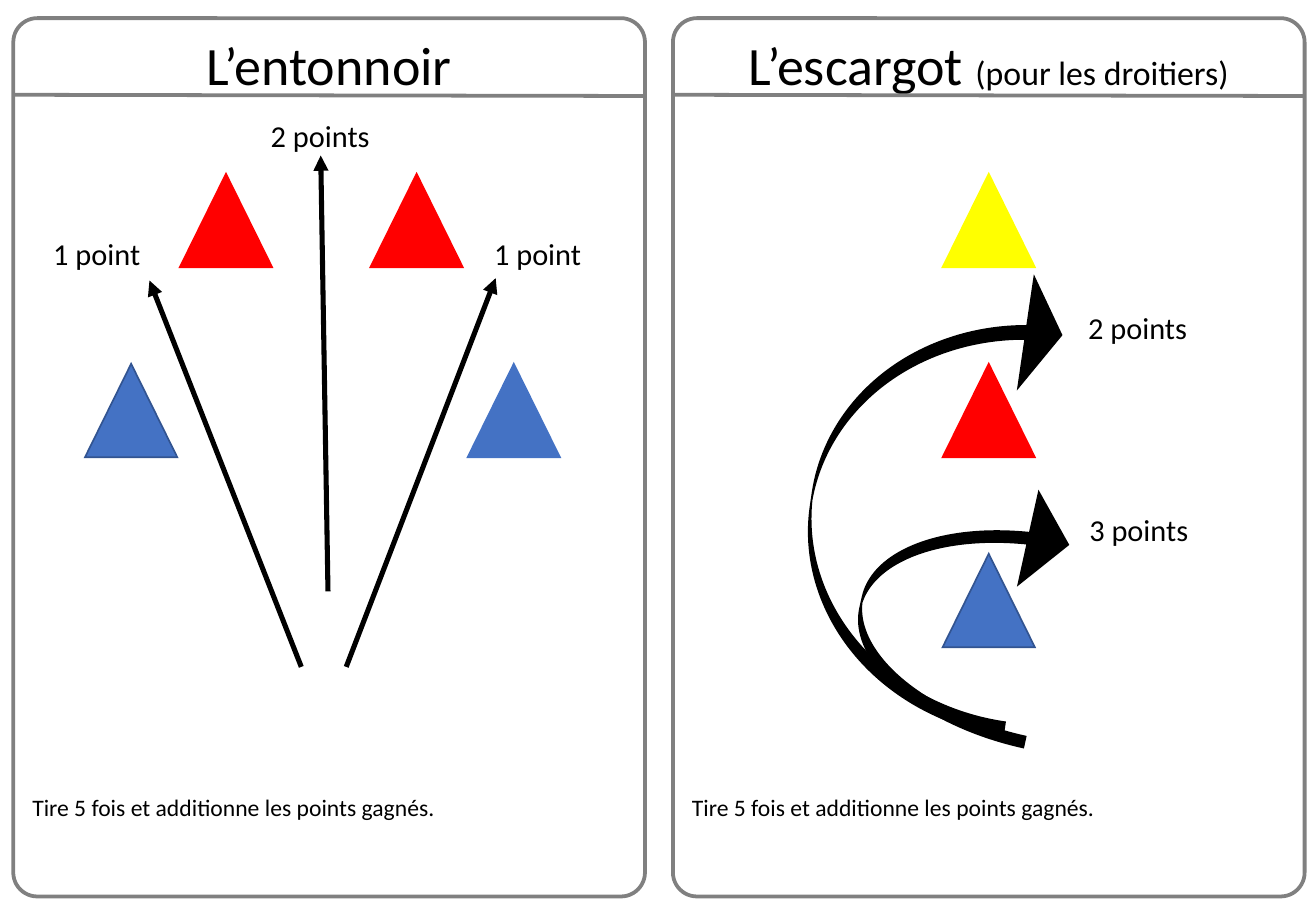
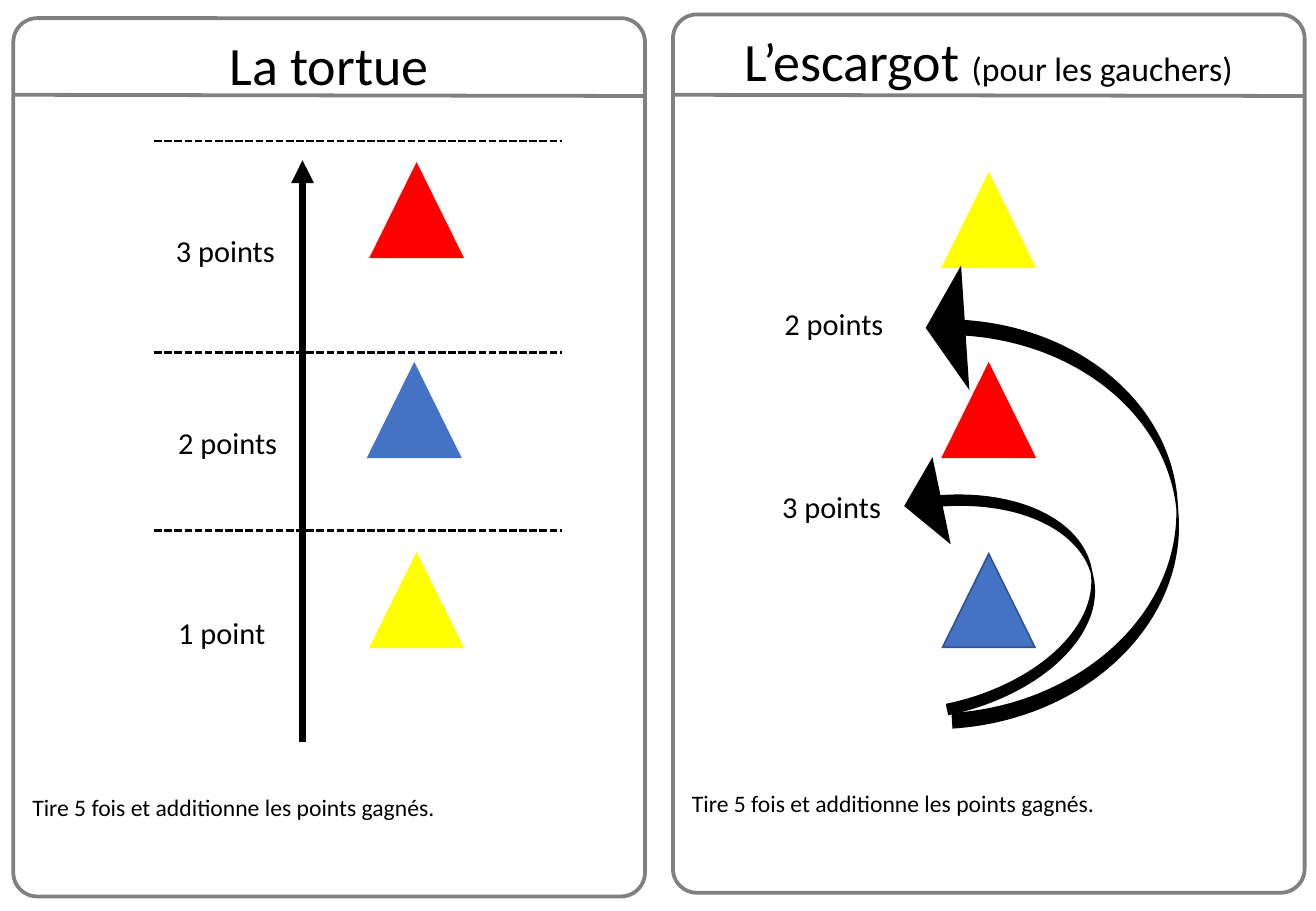
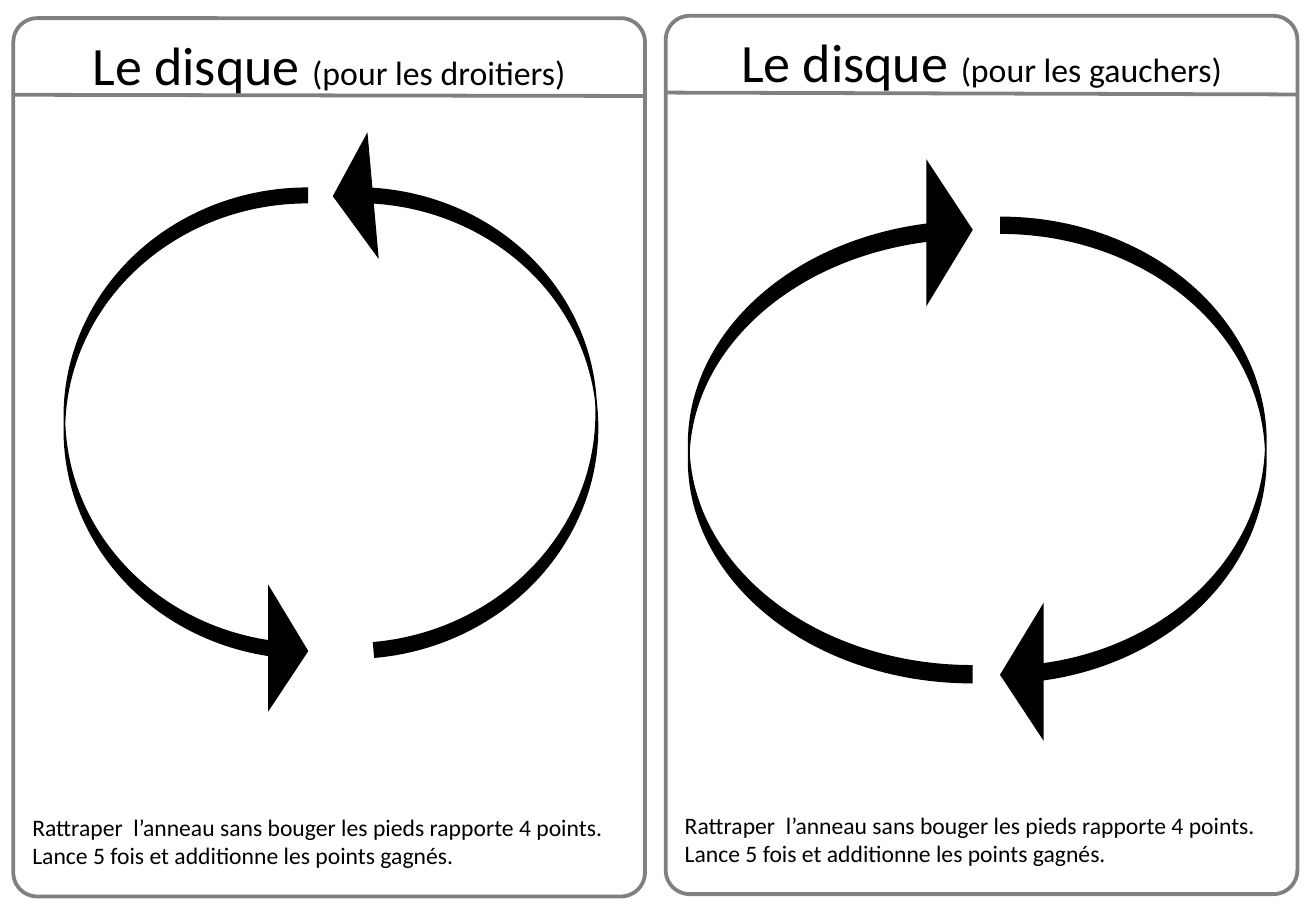
import pptx
import pptx.util
import pptx.dml.color
import pptx.enum.dml
import pptx.enum.shapes
import pptx.enum.text
import pptx.oxml.ns
import lxml.etree

Pt = pptx.util.Pt
RGBColor = pptx.dml.color.RGBColor
MSO_SHAPE = pptx.enum.shapes.MSO_SHAPE
PP_ALIGN = pptx.enum.text.PP_ALIGN
qn = pptx.oxml.ns.qn

# Shared style
BLACK = RGBColor(0x00, 0x00, 0x00)
WHITE = RGBColor(0xFF, 0xFF, 0xFF)
GRAY = RGBColor(0x80, 0x80, 0x80)
RED = RGBColor(0xFF, 0x00, 0x00)
YELLOW = RGBColor(0xFF, 0xFF, 0x00)
BLUE = RGBColor(0x44, 0x72, 0xC4)
DARK_BLUE = RGBColor(0x32, 0x54, 0x91)
FONT = "Calibri"

# Shared layout, in points
CARD_WIDTH, CARD_HEIGHT = 374.4, 520.6
LEFT_CARD, RIGHT_CARD, CARD_TOP = 7.9, 398.9, 10.8
CONE_WIDTH, CONE_HEIGHT = 54.7, 55.4
FAR, MIDDLE, NEAR = [103 + 112.65 * row for row in range(3)]
SNAIL_X = 558.7
LABEL_HEIGHT = 28.8
LABEL_WIDTHS = {"1 point": 67, "2 points": 74.2, "3 points": 74.2}

# Shared wording, with the gap between title and rule
SHOOT = (413, ["Tire 5 fois et additionne les points gagnés."])
CATCH = (425, ["Rattraper  l’anneau sans bouger les pieds rapporte 4 points.",
               "Lance 5 fois et additionne les points gagnés."])
RIGHT_HANDED, LEFT_HANDED = "(pour les droitiers)", "(pour les gauchers)"

SNAIL_CONES = [(SNAIL_X, NEAR, BLUE, DARK_BLUE),
               (SNAIL_X, FAR, YELLOW, YELLOW),
               (SNAIL_X, MIDDLE, RED, RED)]

# cards: left, top, rule start y, rule end y, title, hand, rule text
# cones: left, top, fill, outline
# lines: x1, y1, x2, y2, width, kind
# loops: left, top, width, height, rotation, flipped, head length
# labels: left, top, text
SLIDES = [
    {
        "cards": [
            (LEFT_CARD, CARD_TOP, 56.2, 56.9, "L’entonnoir", "", SHOOT),
            (RIGHT_CARD, CARD_TOP, 56.2, 56.9, "L’escargot ", RIGHT_HANDED, SHOOT),
        ],
        "cones": [
            (50.4, MIDDLE, BLUE, DARK_BLUE),
            (219.6, FAR, RED, RED),
            (277.2, MIDDLE, BLUE, BLUE),
            (106.6, FAR, RED, RED),
        ] + SNAIL_CONES,
        "lines": [
            (194.4, 350.6, 190.1, 92.2, 3, "arrow"),
            (178.6, 395.3, 88.6, 166.3, 3, "arrow"),
            (205.2, 395.3, 293.8, 164.9, 3, "arrow"),
        ],
        "loops": [
            (511.9, 281.5, 112.3, 151.2, 192.5, False, 0.212),
            (482.4, 154.8, 132.5, 272.9, 188.3, False, 0.158),
        ],
        "labels": [
            (285.8, 136.1, "1 point"),
            (24.5, 136.1, "1 point"),
            (153.4, 66.2, "2 points"),
            (638.6, 299.5, "3 points"),
            (637.9, 180, "2 points"),
        ],
    },
    {
        "cards": [
            (LEFT_CARD, CARD_TOP, 56.2, 56.9, "La tortue", "", SHOOT),
            (RIGHT_CARD, 8.6, 56.2, 56.9, "L’escargot ", LEFT_HANDED, SHOOT),
        ],
        "cones": [
            (219.6, 97.2, RED, RED),
            (218.2, MIDDLE, BLUE, BLUE),
            (219.6, NEAR, YELLOW, YELLOW),
        ] + SNAIL_CONES,
        "lines": [(179.3, 439.9, 179.3, 95, 4.5, "arrow")]
        + [(91.4, y, 333.4, y, 1.5, "dash") for y in (83.5, 208.8, 314.6)],
        "loops": [
            (545.8, 263.5, 100.1, 151.2, 168.2, True, 0.212),
            (555.8, 154.1, 141.1, 272.9, 176.2, True, 0.158),
        ],
        "labels": [
            (98.6, 360.7, "1 point"),
            (98.6, 247.7, "2 points"),
            (97.2, 133.9, "3 points"),
            (456.5, 285.8, "3 points"),
            (457.9, 177.1, "2 points"),
        ],
    },
    {
        "cards": [
            (394.6, 9.4, 54.9, 56, "Le disque ", LEFT_HANDED, CATCH),
            (LEFT_CARD, CARD_TOP, 56.2, 56.9, "Le disque ", RIGHT_HANDED, CATCH),
        ],
        "cones": [],
        "lines": [],
        "loops": [
            (208.1, 73.4, 144, 310.3, 174.9, True, 0.158),
            (38.2, 111.6, 144, 310.3, 0, True, 0.158),
            (408.2, 94.3, 167.8, 310.3, 180, False, 0.158),
            (593.3, 128.9, 157, 310.3, 0, False, 0.158),
        ],
        "labels": [],
    },
]


def add_shape(slide, kind, box, fill, outline, width=1):
    shape = slide.shapes.add_shape(kind, *[Pt(length) for length in box])
    shape.shadow.inherit = False
    shape.fill.solid()
    shape.fill.fore_color.rgb = fill
    shape.line.color.rgb = outline
    shape.line.width = Pt(width)
    # Sharp corners
    border = shape.element.spPr.find(qn("a:ln"))
    lxml.etree.SubElement(border, qn("a:miter")).set("lim", "800000")
    return shape


def add_line(slide, ends, color, width, kind="plain"):
    connector = slide.shapes.add_connector(
        pptx.enum.shapes.MSO_CONNECTOR.STRAIGHT, *[Pt(length) for length in ends])
    connector.line.color.rgb = color
    connector.line.width = Pt(width)
    properties = connector.element.spPr
    if kind == "dash":
        connector.line.dash_style = pptx.enum.dml.MSO_LINE.SQUARE_DOT
    if kind == "arrow":
        outline = properties.find(qn("a:ln"))
        lxml.etree.SubElement(outline, qn("a:tailEnd")).set("type", "triangle")
    lxml.etree.SubElement(properties, qn("a:effectLst"))


presentation = pptx.Presentation()
presentation.slide_width = Pt(780)
presentation.slide_height = Pt(540)

for content in SLIDES:
    slide = presentation.slides.add_slide(presentation.slide_layouts[6])

    # Cards with title, rule text and title line
    for left, top, start_y, end_y, title, hand, (gap, rules) in content["cards"]:
        card = add_shape(slide, MSO_SHAPE.ROUNDED_RECTANGLE,
                         (left, top, CARD_WIDTH, CARD_HEIGHT), WHITE, GRAY, 2.25)
        card.adjustments[0] = 0.038
        frame = card.text_frame
        frame.word_wrap = True
        frame.vertical_anchor = pptx.enum.text.MSO_ANCHOR.TOP
        frame.text = "\n".join([title] + rules)
        heading = frame.paragraphs[0]
        heading.alignment = PP_ALIGN.CENTER
        if hand:
            heading.add_run().text = hand
        for paragraph in frame.paragraphs[1:]:
            paragraph.alignment = PP_ALIGN.LEFT
        frame.paragraphs[1].space_before = Pt(gap)
        for paragraph in frame.paragraphs:
            for run in paragraph.runs:
                run.font.name = FONT
                run.font.size = Pt(14)
                run.font.color.rgb = BLACK
        for run, size in zip(heading.runs, (32, 20)):
            run.font.size = Pt(size)
        add_line(slide, (left, start_y, left + CARD_WIDTH, end_y), GRAY, 2.25)

    # Cones
    for left, top, fill, outline in content["cones"]:
        add_shape(slide, MSO_SHAPE.ISOSCELES_TRIANGLE,
                  (left, top, CONE_WIDTH, CONE_HEIGHT), fill, outline)

    # Straight paths and zone borders
    for *ends, width, kind in content["lines"]:
        add_line(slide, ends, BLACK, width, kind)

    # Curved paths
    for *box, rotation, flipped, head in content["loops"]:
        loop = add_shape(slide, MSO_SHAPE.CURVED_LEFT_ARROW, box, BLACK, BLACK)
        for index, value in enumerate((0.059, 0.5, head)):
            loop.adjustments[index] = value
        loop.rotation = rotation
        if flipped:
            loop.element.spPr.find(qn("a:xfrm")).set("flipH", "1")

    # Point labels
    for left, top, text in content["labels"]:
        label = slide.shapes.add_textbox(
            Pt(left), Pt(top), Pt(LABEL_WIDTHS[text]), Pt(LABEL_HEIGHT))
        label.text_frame.word_wrap = False
        label.text_frame.auto_size = pptx.enum.text.MSO_AUTO_SIZE.SHAPE_TO_FIT_TEXT
        label.text_frame.text = text
        font = label.text_frame.paragraphs[0].runs[0].font
        font.name = FONT
        font.size = Pt(18)
        font.color.rgb = BLACK

presentation.save("out.pptx")
